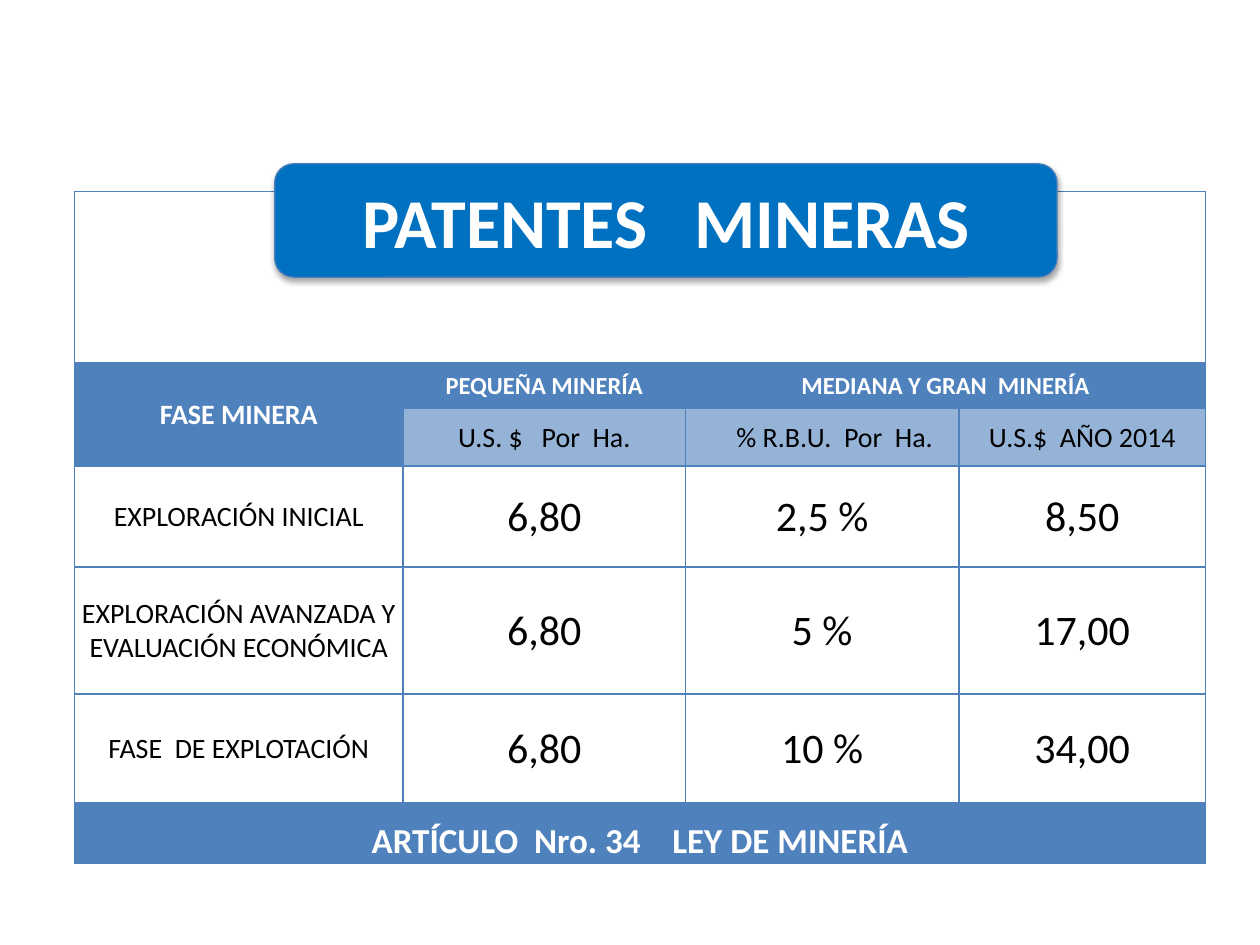
import pptx
import pptx.util
import pptx.dml.color
import pptx.enum.shapes
import pptx.enum.text
import pptx.oxml
import pptx.oxml.ns
from dataclasses import dataclass

Inches = pptx.util.Inches
Pt = pptx.util.Pt
RGB = pptx.dml.color.RGBColor.from_string
ANCHOR = pptx.enum.text.MSO_ANCHOR
NS = pptx.oxml.ns.nsdecls("a")


@dataclass(frozen=True)
class Theme:
    font: str = "Calibri"
    white: str = "FFFFFF"
    black: str = "000000"
    header: str = "4F81BD"
    subheader: str = "95B3D7"
    banner: str = "0070C0"
    banner_line: str = "4B7EBC"
    title_size: int = 40
    value_size: int = 24
    footer_size: int = 20
    label_size: int = 16
    group_size: int = 14


class SlideBuilder:
    def __init__(self, prs, theme):
        self.theme = theme
        self.s = prs.slides.add_slide(prs.slide_layouts[6])

    def text(self, tf, text, size, color, bold=False):
        tf.text = text
        p = tf.paragraphs[0]
        p.alignment = pptx.enum.text.PP_ALIGN.CENTER
        for r in p.runs:
            r.font.name = self.theme.font
            r.font.size = Pt(size)
            r.font.bold = bold
            r.font.color.rgb = RGB(color)

    def table(self, left, top, widths, heights):
        frame = self.s.shapes.add_table(
            len(heights), len(widths), Inches(left), Inches(top),
            Inches(sum(widths)), Inches(sum(heights)))
        table = frame.table
        table.first_row = table.horz_banding = False
        for column, width in zip(table.columns, widths):
            column.width = Inches(width)
        for row, height in zip(table.rows, heights):
            row.height = Inches(height)
        for cell in table.iter_cells():
            self.borders(cell)
            cell.fill.background()
        return table

    def borders(self, cell):
        tcPr = cell._tc.get_or_add_tcPr()
        for side in ("lnL", "lnR", "lnT", "lnB"):
            tcPr.append(pptx.oxml.parse_xml(
                f'<a:{side} {NS} w="12700"><a:solidFill>'
                f'<a:srgbClr val="{self.theme.header}"/></a:solidFill></a:{side}>'))

    def cell(self, cell, text, size, color, bold=False, fill=None,
             anchor=ANCHOR.MIDDLE, left=0.01):
        cell.margin_left = Inches(left)
        cell.margin_right = cell.margin_top = Inches(0.01)
        cell.margin_bottom = 0
        cell.vertical_anchor = anchor
        self.text(cell.text_frame, text, size, color, bold)
        if fill:
            cell.fill.solid()
            cell.fill.fore_color.rgb = RGB(fill)

    def banner(self, left, top, width, height, text):
        sp = self.s.shapes.add_shape(
            pptx.enum.shapes.MSO_SHAPE.ROUNDED_RECTANGLE,
            Inches(left), Inches(top), Inches(width), Inches(height))
        sp.fill.solid()
        sp.fill.fore_color.rgb = RGB(self.theme.banner)
        sp.line.color.rgb = RGB(self.theme.banner_line)
        sp.line.width = Pt(0.75)
        self.shadow(sp)
        sp.text_frame.vertical_anchor = ANCHOR.MIDDLE
        self.text(sp.text_frame, text, self.theme.title_size, self.theme.white, True)

    def shadow(self, sp):
        sp.shadow.inherit = False
        effects = sp._element.spPr.find(pptx.oxml.ns.qn("a:effectLst"))
        effects.append(pptx.oxml.parse_xml(
            f'<a:outerShdw {NS} blurRad="{Pt(3.1)}" dist="{Pt(1.8)}" dir="5400000" '
            f'rotWithShape="0"><a:srgbClr val="{self.theme.black}">'
            '<a:alpha val="35000"/></a:srgbClr></a:outerShdw>'))


def main():
    prs = pptx.Presentation()
    prs.slide_width, prs.slide_height = Inches(10), Inches(7.5)
    theme = Theme()
    b = SlideBuilder(prs, theme)

    table = b.table(0.59, 1.52, [2.61, 2.24, 2.17, 1.96],
                    [1.36, 0.36, 0.46, 0.8, 1.01, 0.86, 0.48])
    for first, last in [((0, 0), (0, 3)), ((1, 0), (2, 0)),
                        ((1, 2), (1, 3)), ((6, 0), (6, 3))]:
        table.cell(*first).merge(table.cell(*last))

    headings = [(0, "FASE MINERA", theme.label_size),
                (1, "PEQUEÑA MINERÍA", theme.group_size),
                (2, "MEDIANA Y GRAN  MINERÍA", theme.group_size)]
    for col, text, size in headings:
        b.cell(table.cell(1, col), text, size, theme.white, True, theme.header)

    units = [("U.S. $   Por  Ha.", 0.01), ("% R.B.U.  Por  Ha.", 0.21),
             ("U.S.$  AÑO 2014", 0.01)]
    for col, (text, left) in enumerate(units, 1):
        b.cell(table.cell(2, col), text, theme.label_size, theme.black,
               fill=theme.subheader, left=left)

    phases = [("EXPLORACIÓN INICIAL", "6,80", "2,5 %", "8,50"),
              ("EXPLORACIÓN AVANZADA Y EVALUACIÓN ECONÓMICA", "6,80", "5 %", "17,00"),
              ("FASE  DE EXPLOTACIÓN", "6,80", "10 %", "34,00")]
    for row, phase in enumerate(phases, 3):
        for col, text in enumerate(phase):
            size = theme.value_size if col else theme.label_size
            b.cell(table.cell(row, col), text, size, theme.black)

    b.cell(table.cell(6, 0), "ARTÍCULO  Nro. 34    LEY DE MINERÍA", theme.footer_size,
           theme.white, True, theme.header, ANCHOR.BOTTOM)

    b.banner(2.18, 1.3, 6.21, 0.9, "PATENTES   MINERAS")
    prs.save("out.pptx")


if __name__ == "__main__":
    main()
